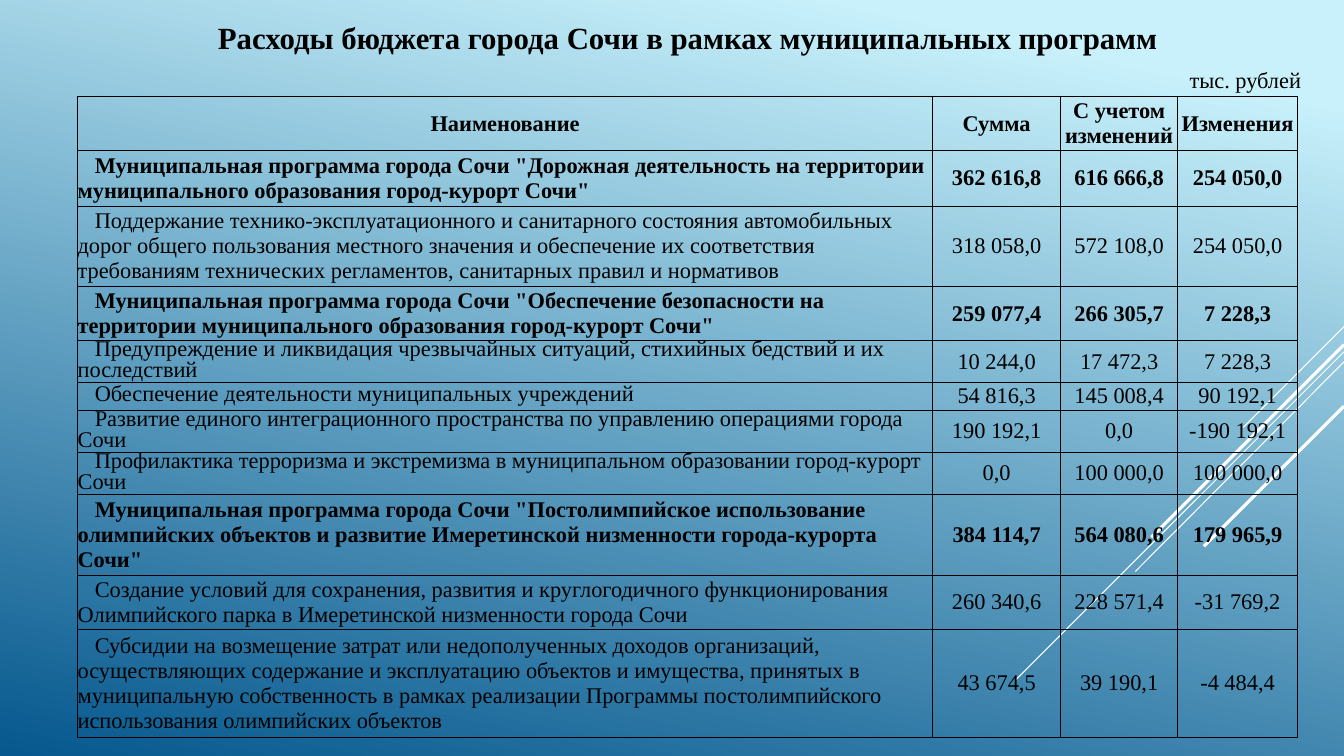
import pptx
import pptx.dml.color
import pptx.enum.shapes
import pptx.enum.text
import pptx.oxml
import pptx.oxml.ns
import pptx.util
from lxml import etree
from pptx.util import Inches

ALIGN = pptx.enum.text.PP_ALIGN
ANCHOR = pptx.enum.text.MSO_ANCHOR
FIT = pptx.enum.text.MSO_AUTO_SIZE
qn = pptx.oxml.ns.qn

RAYS = [  # start, end, width in points
    ((13.33, 3.24), (12.33, 4.24), 0.75),
    ((13.33, 3.49), (10.07, 6.75), 0.75),
    ((13.33, 3.59), (11.26, 5.67), 0.75),
    ((13.33, 3.42), (11.42, 5.33), 2.25),
    ((13.33, 4.03), (11.94, 5.42), 2.25),
]
COLS = [8.48, 1.27, 1.16, 1.19]
HEAD = ["Наименование", "Сумма", "С учетом изменений", "Изменения"]
BOLD, PLAIN, TIGHT = "bold", "plain", "tight"
ROWS = [  # style, height, cells
    (BOLD, 0.55, ['Муниципальная программа города Сочи "Дорожная деятельность на территории '
                  'муниципального образования город-курорт Сочи"',
                  "362 616,8", "616 666,8", "254 050,0"]),
    (PLAIN, 0.8, ["Поддержание технико-эксплуатационного и санитарного состояния автомобильных "
                  "дорог общего пользования местного значения и обеспечение их соответствия "
                  "требованиям технических регламентов, санитарных правил и нормативов",
                  "318 058,0", "572 108,0", "254 050,0"]),
    (BOLD, 0.53, ['Муниципальная программа города Сочи "Обеспечение безопасности на '
                  'территории муниципального образования город-курорт Сочи"',
                  "259 077,4", "266 305,7", "7 228,3"]),
    (TIGHT, 0.42, ["Предупреждение и ликвидация чрезвычайных ситуаций, стихийных бедствий и их "
                   "последствий", "10 244,0", "17 472,3", "7 228,3"]),
    (TIGHT, 0.27, ["Обеспечение деятельности муниципальных учреждений",
                   "54 816,3", "145 008,4", "90 192,1"]),
    (TIGHT, 0.42, ["Развитие единого интеграционного пространства по управлению операциями "
                   "города Сочи", "190 192,1", "0,0", "-190 192,1"]),
    (TIGHT, 0.42, ["Профилактика терроризма и экстремизма в муниципальном образовании "
                   "город-курорт Сочи", "0,0", "100 000,0", "100 000,0"]),
    (BOLD, 0.8, ['Муниципальная программа города Сочи "Постолимпийское использование '
                 'олимпийских объектов и развитие Имеретинской низменности города-курорта Сочи"',
                 "384 114,7", "564 080,6", "179 965,9"]),
    (PLAIN, 0.54, ["Создание условий для сохранения, развития и круглогодичного функционирования "
                   "Олимпийского парка в Имеретинской низменности города Сочи",
                   "260 340,6", "228 571,4", "-31 769,2"]),
    (PLAIN, 1.07, ["Субсидии на возмещение затрат или недополученных доходов организаций, "
                   "осуществляющих содержание и эксплуатацию объектов и имущества, принятых в "
                   "муниципальную собственность в рамках реализации Программы постолимпийского "
                   "использования олимпийских объектов",
                   "43 674,5", "39 190,1", "-4 484,4"]),
]


def color(code):
    return pptx.dml.color.RGBColor.from_string(code)


class Page:
    face = "Times New Roman"
    ink = "000000"

    def __init__(self, deck):
        self.slide = deck.slides.add_slide(deck.slide_layouts[5])

    def back(self, stops, angle):
        fill = self.slide.background.fill
        fill.gradient()
        fill.gradient_angle = angle
        for stop, (place, code) in zip(fill.gradient_stops, stops):
            stop.position = place
            stop.color.rgb = color(code)

    def ray(self, start, end, width):
        line = self.slide.shapes.add_connector(
            pptx.enum.shapes.MSO_CONNECTOR.STRAIGHT, *map(Inches, start + end))
        line.line.color.rgb = color("FFFFFF")
        line.line.width = pptx.util.Pt(width)
        etree.SubElement(line._element.spPr, qn("a:effectLst"))

    def put(self, frame, text, size=16, bold=False, align=ALIGN.LEFT):
        """Fill a text frame with one styled paragraph and return it."""
        frame.text = text
        para = frame.paragraphs[0]
        para.alignment = align
        font = para.font
        font.name, font.size, font.bold = self.face, pptx.util.Pt(size), bold
        font.color.rgb = color(self.ink)
        return para

    def title(self, text, *box):
        shape = self.slide.shapes.title
        shape.left, shape.top, shape.width, shape.height = map(Inches, box)
        frame = shape.text_frame
        self.put(frame, text, 22, True, ALIGN.CENTER)
        frame.word_wrap = True
        frame.auto_size = FIT.SHAPE_TO_FIT_TEXT
        frame.vertical_anchor = ANCHOR.TOP

    def label(self, text, *box):
        frame = self.slide.shapes.add_textbox(*map(Inches, box)).text_frame
        frame.word_wrap = True
        frame.auto_size = FIT.SHAPE_TO_FIT_TEXT
        self.put(frame, text)

    def border(self, cell):
        props = cell._tc.get_or_add_tcPr()
        for side in ("a:lnL", "a:lnR", "a:lnT", "a:lnB"):
            edge = etree.SubElement(props, qn(side), w=str(pptx.util.Pt(0.5)))
            fill = etree.SubElement(edge, qn("a:solidFill"))
            etree.SubElement(fill, qn("a:srgbClr"), val=self.ink)

    def cell(self, cell, text, bold, align):
        cell.margin_left = cell.margin_right = cell.margin_top = cell.margin_bottom = 0
        cell.vertical_anchor = ANCHOR.MIDDLE
        self.border(cell)
        cell.fill.background()
        return self.put(cell.text_frame, text, bold=bold, align=align)

    def table(self, left, top, cols, head, rows):
        rows = [(BOLD, 0.53, head)] + rows
        tall = sum(row[1] for row in rows)
        grid = self.slide.shapes.add_table(
            len(rows), len(cols), *map(Inches, (left, top, sum(cols), tall))).table
        grid.horz_banding = grid.first_row = False
        for col, width in zip(grid.columns, cols):
            col.width = Inches(width)
        for r, (style, height, texts) in enumerate(rows):
            grid.rows[r].height = Inches(height)
            for c, text in enumerate(texts):
                name = r > 0 and c == 0
                para = self.cell(grid.cell(r, c), text, style == BOLD,
                                 ALIGN.LEFT if name else ALIGN.CENTER)
                if name:
                    para._p.get_or_add_pPr().set("indent", str(Inches(0.17)))
                    if style == TIGHT:
                        para.line_spacing = pptx.util.Pt(15)


def main():
    deck = pptx.Presentation()
    deck.slide_width, deck.slide_height = Inches(13.33), Inches(7.5)
    page = Page(deck)
    page.back([(0.1, "C8F1FB"), (1, "06588E")], 258)
    for ray in RAYS:
        page.ray(*ray)
    page.title("Расходы бюджета города Сочи в рамках муниципальных программ",
               2.01, 0.14, 9.62, 0.47)
    page.table(0.77, 0.96, COLS, HEAD, ROWS)
    page.label("тыс. рублей", 11.7, 0.61, 1.51, 0.37)
    deck.save("out.pptx")


if __name__ == "__main__":
    main()
